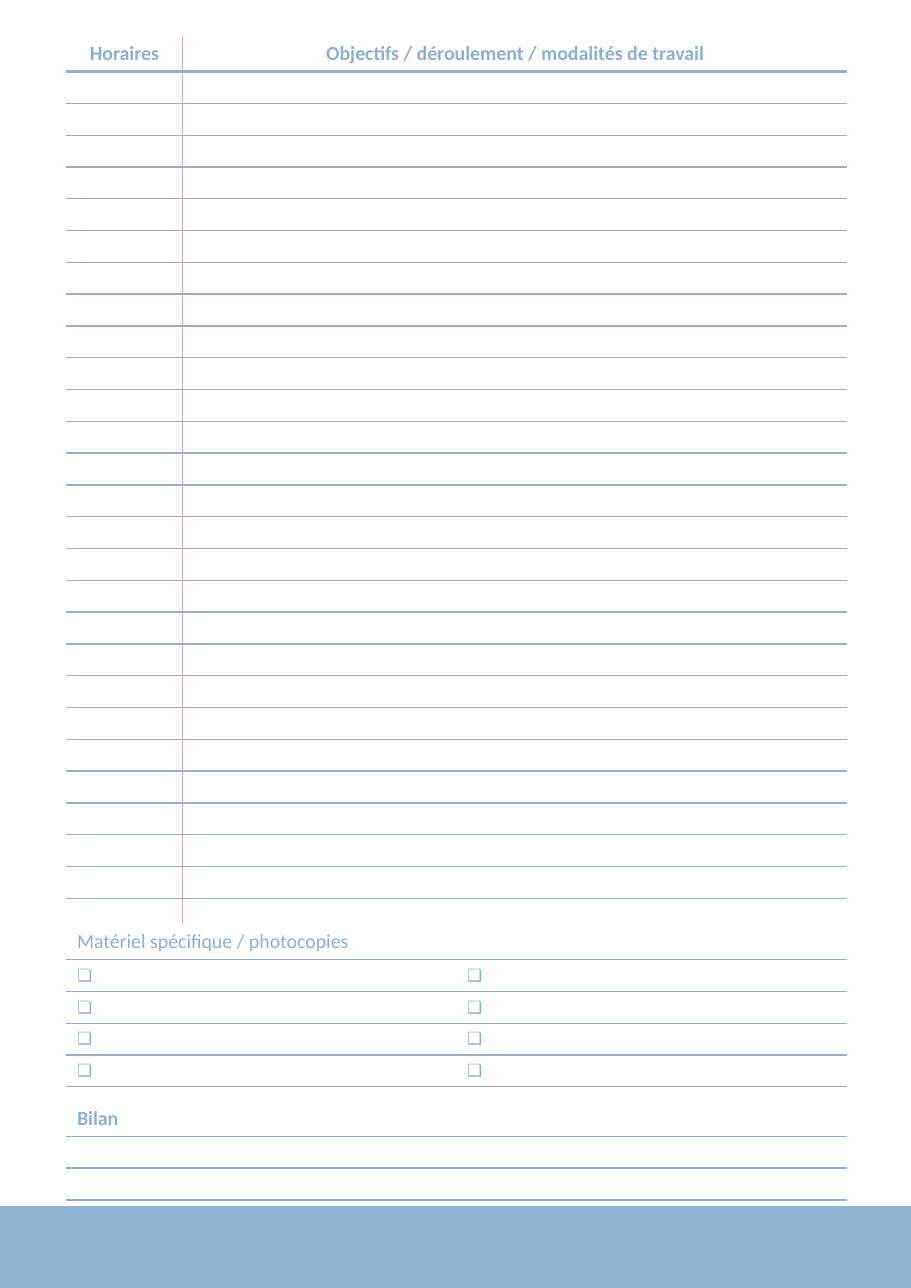
import dataclasses
import typing

import lxml.etree
import pptx
import pptx.dml.color
import pptx.enum.shapes
import pptx.enum.text
import pptx.oxml.ns
import pptx.util

Inches = pptx.util.Inches
Pt = pptx.util.Pt
qn = pptx.oxml.ns.qn
ALIGN = pptx.enum.text.PP_ALIGN

COLOURS = {"blue": "8EB1D2", "rule": "9AADCD", "pink": "DCA9CC", "white": "FFFFFF"}
FONT = "Calibri"
RULED_ROWS = 27
HEADING = 0.32
LINE = 7.8 / RULED_ROWS
SPACER = 0.13


@dataclasses.dataclass(frozen=True)
class Border:
    """A cell border with its colour name and width in points."""
    colour: str
    width: float


THIN = Border("rule", 1)
THICK = Border("blue", 2.25)
MARGIN_LINE = Border("pink", 1)


@dataclasses.dataclass(frozen=True)
class Row:
    """One table row, with the rule under it."""
    texts: tuple[str, str] = ("", "")
    height: float = LINE
    size: float = 11
    bold: bool = False
    align: typing.Any = ALIGN.LEFT
    bottom: typing.Optional[Border] = THIN


@dataclasses.dataclass(frozen=True)
class Grid:
    """A two-column table with an optional line between its columns."""
    left: float
    top: float
    widths: tuple[float, float]
    rows: list[Row]
    divider: typing.Optional[Border] = None


def rgb(name: str) -> pptx.dml.color.RGBColor:
    """Return a named colour."""
    return pptx.dml.color.RGBColor.from_string(COLOURS[name])


def set_borders(cell: typing.Any, borders: dict[str, typing.Optional[Border]]) -> None:
    """Draw the four sides of a cell; a side without a border stays clear."""
    tcPr = cell._tc.get_or_add_tcPr()
    for i, side in enumerate("LRTB"):
        border = borders.get(side)
        ln = lxml.etree.Element(qn(f"a:ln{side}"))
        if border:
            ln.set("w", str(Pt(border.width)))
            fill = lxml.etree.SubElement(ln, qn("a:solidFill"))
            lxml.etree.SubElement(fill, qn("a:srgbClr"), val=COLOURS[border.colour])
        else:
            lxml.etree.SubElement(ln, qn("a:noFill"))
        tcPr.insert(i, ln)


def fill_cell(cell: typing.Any, text: str, row: Row) -> None:
    """Write and format the text of a cell."""
    cell.fill.solid()
    cell.fill.fore_color.rgb = rgb("white")
    cell.margin_top = cell.margin_bottom = Inches(0.03)
    cell.vertical_anchor = pptx.enum.text.MSO_ANCHOR.MIDDLE
    cell.text_frame.text = text
    p = cell.text_frame.paragraphs[0]
    p.alignment = row.align
    for r in p.runs:
        r.font.name = FONT
        r.font.size = Pt(row.size)
        r.font.bold = row.bold
        r.font.color.rgb = rgb("blue")
    if not text:
        p._p.get_or_add_endParaRPr().set("sz", str(int(row.size * 100)))


def add_grid(s: typing.Any, grid: Grid) -> None:
    """Add a table to the slide."""
    height = sum(row.height for row in grid.rows)
    table = s.shapes.add_table(
        len(grid.rows), 2, Inches(grid.left), Inches(grid.top),
        Inches(sum(grid.widths)), Inches(height)).table
    table.first_row = table.horz_banding = False
    for column, width in zip(table.columns, grid.widths):
        column.width = Inches(width)
    above = None
    for i, row in enumerate(grid.rows):
        table.rows[i].height = Inches(row.height)
        for j, text in enumerate(row.texts):
            cell = table.cell(i, j)
            fill_cell(cell, text, row)
            set_borders(cell, {"RL"[j]: grid.divider, "T": above, "B": row.bottom})
        above = row.bottom


def add_footer(s: typing.Any) -> None:
    """Add the band at the foot of the page."""
    sp = s.shapes.add_shape(
        pptx.enum.shapes.MSO_SHAPE.RECTANGLE,
        Inches(0), Inches(10.95), Inches(8.27), Inches(0.74))
    sp.shadow.inherit = False
    sp.fill.solid()
    sp.fill.fore_color.rgb = rgb("blue")
    sp.line.color.rgb = rgb("blue")
    sp.line.width = Pt(1)


def main() -> None:
    """Build the lesson planner page."""
    prs = pptx.Presentation()
    prs.slide_width, prs.slide_height = Inches(8.27), Inches(11.69)
    s = prs.slides.add_slide(prs.slide_layouts[6])
    add_footer(s)
    schedule = [
        Row(("Horaires", "Objectifs / déroulement / modalités de travail"),
            HEADING, 13, True, ALIGN.CENTER, THICK),
        *[Row()] * RULED_ROWS,
    ]
    review = [
        Row(("Matériel spécifique / photocopies", ""), HEADING, 13),
        *[Row(("❏", "❏"))] * 4,
        Row(height=SPACER, size=2, bottom=None),
        Row(("Bilan", ""), HEADING, 13, True),
        *[Row()] * 2,
    ]
    add_grid(s, Grid(0.6, 0.33, (1.06, 6.03), schedule, MARGIN_LINE))
    add_grid(s, Grid(0.6, 8.39, (3.54, 3.55), review))
    prs.save("out.pptx")


if __name__ == "__main__":
    main()
